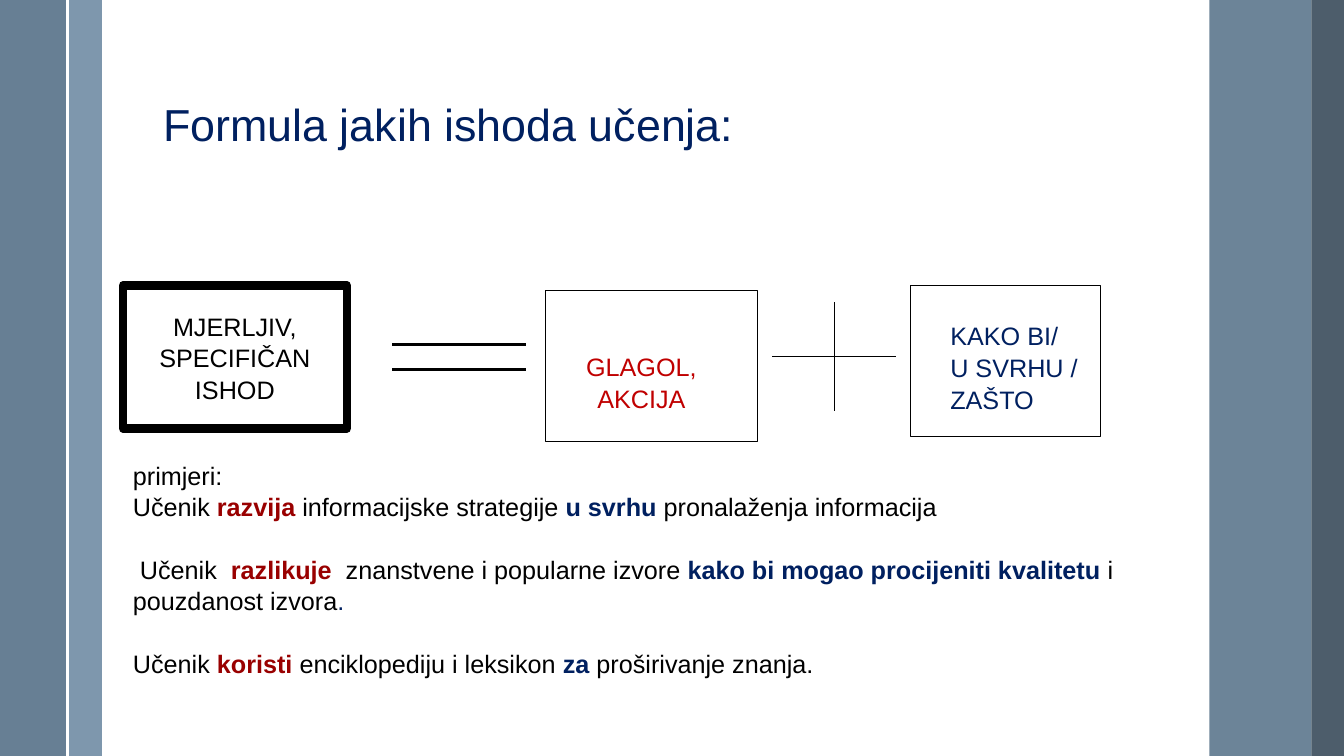
from lxml.etree import SubElement
from pptx import Presentation
from pptx.dml.color import RGBColor
from pptx.enum.shapes import MSO_CONNECTOR as Connector, MSO_SHAPE as Shape
from pptx.enum.text import MSO_ANCHOR as Anchor, MSO_AUTO_SIZE as AutoSize, PP_ALIGN as Align
from pptx.oxml.ns import qn
from pptx.util import Cm, Pt

BLACK, WHITE, NAVY, RED, DARK_RED = "000000", "FFFFFF", "002060", "C00000", "990000"
STEEL, SKY, SLATE = "577289", "7E97AD", "3A4C5B"
HEIGHT = 19.05
BODY_SPACING = 1.05
EXAMPLE_GAP = Pt(21.7)

# left, width, colour, opacity in percent
PANELS = [
    (1.73, 0.84, SKY, 100),
    (0, 1.7, STEEL, 90),
    (30.48, 2.57, STEEL, 87),
    (33.05, 0.82, SLATE, 90),
]

# Each example is a list of (wording, colour, bold)
EXAMPLES = [
    [("primjeri:", BLACK, False)],
    [("Učenik ", BLACK, False), ("razvija", DARK_RED, True),
     (" informacijske strategije ", BLACK, False), ("u svrhu ", NAVY, True),
     ("pronalaženja informacija", BLACK, False)],
    [(" Učenik  ", BLACK, False), ("razlikuje  ", DARK_RED, True),
     ("znanstvene i popularne izvore ", BLACK, False),
     ("kako bi mogao procijeniti kvalitetu ", NAVY, True),
     ("i pouzdanost izvora", BLACK, False), (".", NAVY, False)],
    [("Učenik ", BLACK, False), ("koristi", DARK_RED, True),
     (" enciklopediju i leksikon ", BLACK, False), ("za", NAVY, True),
     (" proširivanje znanja.", BLACK, False)],
]


def paint(color_format, color):
    color_format.rgb = RGBColor.from_string(color)


def set_all(target, values):
    for name, value in values.items():
        setattr(target, name, value)


def add_run(paragraph, wording, color, bold=False, size=18):
    run = paragraph.add_run()
    run.text = wording
    set_all(run.font, {"name": "Arial", "size": Pt(size), "bold": bold})
    paint(run.font.color, color)


def write_paragraphs(frame, paragraphs, align):
    for index, runs in enumerate(paragraphs):
        paragraph = frame.add_paragraph() if index else frame.paragraphs[0]
        set_all(paragraph, {"alignment": align, "line_spacing": BODY_SPACING})
        for run in runs:
            add_run(paragraph, *run)


def add_box(slide, area, fill=None, opacity=100, line=None, weight=0.75):
    box = slide.shapes.add_shape(Shape.RECTANGLE, *map(Cm, area))
    box.shadow.inherit = False
    if fill:
        box.fill.solid()
        paint(box.fill.fore_color, fill)
        if opacity < 100:
            color = box.fill._xPr.find(qn("a:solidFill"))[0]
            SubElement(color, qn("a:alpha"), val=str(opacity * 1000))
    else:
        box.fill.background()
    if line:
        paint(box.line.color, line)
        box.line.width = Pt(weight)
    else:
        box.line.fill.background()
    return box


def add_line(slide, start, end, color=BLACK, weight=0.75):
    line = slide.shapes.add_connector(Connector.STRAIGHT, *map(Cm, start + end))
    paint(line.line.color, color)
    line.line.width = Pt(weight)
    SubElement(line._element.spPr, qn("a:effectLst"))


def add_text(slide, area, paragraphs, align=Align.LEFT, wrap=False):
    frame = slide.shapes.add_textbox(*map(Cm, area)).text_frame
    set_all(frame, {"word_wrap": wrap, "auto_size": AutoSize.SHAPE_TO_FIT_TEXT})
    write_paragraphs(frame, paragraphs, align)
    return frame


def one_color(lines, color):
    return [[(line, color)] for line in lines]


def add_side_panels(slide):
    for left, width, color, opacity in PANELS:
        add_box(slide, (left, 0, width, HEIGHT), color, opacity)
    add_line(slide, (1.7, 0), (1.7, HEIGHT), WHITE, 1.5)


def add_title(slide):
    title = slide.shapes.title
    set_all(title, {"left": Cm(3.86), "top": Cm(1.32), "width": Cm(21.82), "height": Cm(2.62)})
    frame = title.text_frame
    set_all(frame, {"vertical_anchor": Anchor.BOTTOM, "word_wrap": True,
                    "auto_size": AutoSize.NONE})
    heading = frame.paragraphs[0]
    set_all(heading, {"alignment": Align.LEFT, "line_spacing": 0.9})
    add_run(heading, "Formula jakih ishoda učenja:", NAVY, size=32)


def add_formula(slide):
    outcome = add_box(slide, (3.1, 7.19, 5.64, 3.61), WHITE, line=BLACK, weight=6)
    set_all(outcome.text_frame, {"vertical_anchor": Anchor.MIDDLE, "word_wrap": False})
    write_paragraphs(outcome.text_frame,
                     one_color(["MJERLJIV,", "SPECIFIČAN", "ISHOD"], BLACK), Align.CENTER)

    for equals_y in (8.69, 9.32):
        add_line(slide, (9.88, equals_y), (13.26, equals_y), weight=2.25)

    add_box(slide, (13.74, 7.32, 5.36, 3.81), line=BLACK)
    add_text(slide, (14.5, 8.69, 3.33, 1.8),
             one_color(["GLAGOL,", "AKCIJA"], RED), Align.CENTER)

    add_line(slide, (19.46, 8.99), (22.58, 8.99))
    add_line(slide, (21.03, 7.62), (21.03, 10.36))

    add_box(slide, (22.94, 7.19, 4.8, 3.81), line=BLACK)
    add_text(slide, (23.7, 7.92, 3.76, 2.57),
             one_color(["KAKO BI/", "U SVRHU /", "ZAŠTO"], NAVY))


def add_examples(slide):
    frame = add_text(slide, (3.1, 11.43, 27.36, 5.64), EXAMPLES, wrap=True)
    for example in frame.paragraphs[2:]:
        example.space_before = EXAMPLE_GAP


def main():
    deck = Presentation()
    set_all(deck, {"slide_width": Cm(33.87), "slide_height": Cm(HEIGHT)})
    slide = deck.slides.add_slide(deck.slide_layouts[5])
    add_side_panels(slide)
    add_title(slide)
    add_formula(slide)
    add_examples(slide)
    deck.save("out.pptx")


if __name__ == "__main__":
    main()
